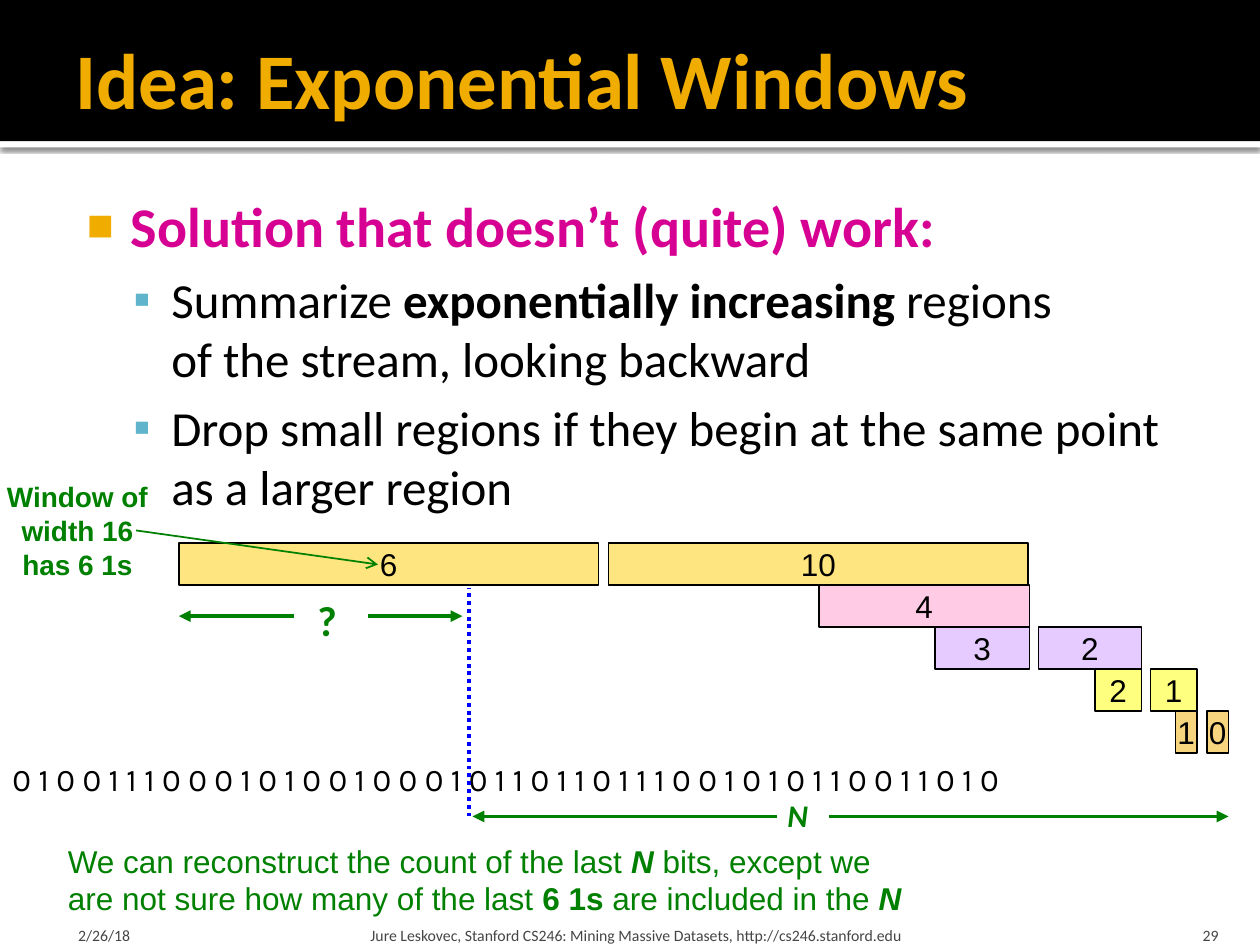
import pptx
import pptx.dml.color
import pptx.enum.shapes
import pptx.enum.text
import pptx.oxml
import pptx.oxml.ns
import pptx.util
from lxml import etree
from pptx.util import Inches

COLORS = {
    "black": "000000", "white": "FFFFFF", "gold": "F0AD00", "magenta": "D60093",
    "teal": "60B5CC", "gray": "454545", "green": "008000", "blue": "0000FF",
    "amber": "FFCC00", "pink": "FF99CC", "lilac": "CC99FF", "yellow": "FFFF00",
}
ANCHOR = pptx.enum.text.MSO_ANCHOR
ALIGN = pptx.enum.text.PP_ALIGN
AUTO_SIZE = pptx.enum.text.MSO_AUTO_SIZE
DEFAULT_INSETS = (0.1, 0.05, 0.1, 0.05)


def rgb(color):
    return pptx.dml.color.RGBColor.from_string(COLORS[color])


def add_xml(parent, tag, **attributes):
    child = etree.SubElement(parent, pptx.oxml.ns.qn("a:" + tag))
    for name, value in attributes.items():
        child.set(name, str(value))
    return child


class SlideBuilder:
    def __init__(self, slide):
        self.shapes = slide.shapes

    def style_frame(self, frame, insets=DEFAULT_INSETS, anchor=ANCHOR.TOP, wrap=True, grow=False):
        frame.word_wrap = wrap
        frame.auto_size = AUTO_SIZE.SHAPE_TO_FIT_TEXT if grow else AUTO_SIZE.NONE
        frame.vertical_anchor = anchor
        (frame.margin_left, frame.margin_top,
         frame.margin_right, frame.margin_bottom) = map(Inches, insets)

    def add_runs(self, para, runs, size, color, font="Calibri", align=ALIGN.LEFT):
        """Add runs given as (text, style); style holds b for bold and i for italic."""
        para.alignment = align
        for text, style in runs:
            for index, line in enumerate(text.split("\n")):
                if index:
                    para.add_line_break()
                span = para.add_run()
                span.text = line
                span.font.name = font
                span.font.size = pptx.util.Pt(size)
                span.font.bold = "b" in style
                span.font.italic = "i" in style
                span.font.color.rgb = rgb(color)

    def text(self, at, runs, size, color, font="Calibri", align=ALIGN.LEFT, **frame_style):
        box = self.shapes.add_textbox(*map(Inches, at))
        self.style_frame(box.text_frame, **frame_style)
        self.add_runs(box.text_frame.paragraphs[0], runs, size, color, font, align)

    def bullet(self, para, char, color, left, hanging, percent=100):
        properties = para._p.get_or_add_pPr()
        properties.set("marL", str(Inches(left)))
        properties.set("indent", str(-Inches(hanging)))
        add_xml(add_xml(properties, "buClr"), "srgbClr", val=COLORS[color])
        add_xml(properties, "buSzPct", val=percent * 1000)
        add_xml(properties, "buFont", typeface="Arial")
        add_xml(properties, "buChar", char=char)

    def outline(self, items):
        box = self.shapes.add_textbox(*map(Inches, (0.5, 1.42, 9, 5.75)))
        frame = box.text_frame
        self.style_frame(frame, insets=(0.06, 0.1, 0.1, 0.05))
        for index, (level, runs) in enumerate(items):
            para = frame.add_paragraph() if index else frame.paragraphs[0]
            para.level = level
            if level:
                para.space_before = pptx.util.Pt(6)
                self.add_runs(para, runs, 28, "black")
                self.bullet(para, "▪", "teal", 0.8, 0.3)
            else:
                self.add_runs(para, runs, 32, "magenta")
                self.bullet(para, "■", "gold", 0.48, 0.35, 80)

    def rectangle(self, at, color):
        box = self.shapes.add_shape(pptx.enum.shapes.MSO_SHAPE.RECTANGLE, *map(Inches, at))
        box.shadow.inherit = False
        box.fill.solid()
        box.fill.fore_color.rgb = rgb(color)
        box.line.fill.background()
        return box

    def drop_shadow(self, box):
        effects = box._element.spPr.find(pptx.oxml.ns.qn("a:effectLst"))
        shadow = add_xml(effects, "outerShdw", blurRad=pptx.util.Pt(2.5),
                         dist=pptx.util.Pt(0.8), dir=90 * 60000, rotWithShape=0)
        add_xml(add_xml(shadow, "srgbClr", val=COLORS["black"]), "alpha", val=60000)

    def region(self, at, color, count):
        """Draw a half-transparent stream region labelled with its count of 1s."""
        box = self.rectangle(at, color)
        fill_color = box._element.spPr.find(".//" + pptx.oxml.ns.qn("a:srgbClr"))
        add_xml(fill_color, "alpha", val=50000)
        box.line.color.rgb = rgb("black")
        box.line.width = pptx.util.Pt(0.75)
        self.style_frame(box.text_frame, anchor=ANCHOR.MIDDLE, wrap=False)
        self.add_runs(box.text_frame.paragraphs[0], [(str(count), "")], 18, "black",
                      "Arial", ALIGN.CENTER)

    def line(self, start, end, color="green", width=2.25, head=None, dash=None):
        connector = self.shapes.add_connector(
            pptx.enum.shapes.MSO_CONNECTOR.STRAIGHT, *map(Inches, start + end))
        connector.line.color.rgb = rgb(color)
        connector.line.width = pptx.util.Pt(width)
        stroke = connector.line._get_or_add_ln()
        if dash:
            add_xml(stroke, "prstDash", val=dash)
        if head:
            add_xml(stroke, "tailEnd", type=head)
        add_xml(connector._element.spPr, "effectLst")


def main():
    deck = pptx.Presentation()
    deck.slide_width, deck.slide_height = Inches(10), Inches(7.5)
    page = SlideBuilder(deck.slides.add_slide(deck.slide_layouts[6]))

    page.drop_shadow(page.rectangle((0, 1.12, 10, 0.05), "white"))
    page.rectangle((0, 0, 10, 1.12), "black")
    page.text((0.5, 0.08, 9, 1.08), [("Idea: Exponential Windows", "b")], 45, "gold",
              insets=(0.1, 0.05, 0.05, 0.05), anchor=ANCHOR.MIDDLE)
    page.outline([
        (0, [("Solution that doesn’t (quite) work:", "b")]),
        (1, [("Summarize ", ""), ("exponentially increasing ", "b"),
             ("regions \nof the stream, looking backward", "")]),
        (1, [("Drop small regions if they begin at the same point as a larger region", "")]),
    ])

    footers = [
        (0.5, 2.33, 0.12, "2/26/18", ALIGN.LEFT),
        (2.89, 6.02, 0.05,
         "Jure Leskovec, Stanford CS246: Mining Massive Datasets, http://cs246.stanford.edu",
         ALIGN.LEFT),
        (8.97, 0.8, 0.1, "29", ALIGN.RIGHT),
    ]
    for left, width, inset, text, align in footers:
        page.text((left, 7.2, width, 0.3), [(text, "")], 9, "gray", align=align,
                  insets=(inset, 0.05, inset, 0), anchor=ANCHOR.BOTTOM)

    bits = "010011100010100100010110110111001010110011010"
    page.text((0, 5.98, 9.81, 0.4), [(" ".join(bits), "")], 18, "black", "Karla",
              wrap=False, grow=True)

    page.text((6.15, 6.27, 0.38, 0.4), [("N", "bi")], 18, "green", wrap=False, grow=True)
    page.text((2.42, 4.67, 0.35, 0.5), [("?", "b")], 24, "green", wrap=False, grow=True)
    for y, start, end in [(6.48, 6.17, 3.75), (6.48, 6.58, 9.75),
                          (4.89, 2.33, 1.42), (4.89, 2.92, 3.67)]:
        page.line((start, y), (end, y), head="triangle")

    region_rows = [
        ("amber", [(1.42, 3.33, 6), (4.83, 3.33, 10)]),
        ("pink", [(6.5, 1.67, 4)]),
        ("lilac", [(7.42, 0.75, 3), (8.24, 0.82, 2)]),
        ("yellow", [(8.69, 0.37, 2), (9.13, 0.37, 1)]),
        ("gold", [(9.33, 0.17, 1), (9.58, 0.17, 0)]),
    ]
    row_height = 1 / 3
    for row, (color, regions) in enumerate(region_rows):
        for left, width, count in regions:
            page.region((left, 4.31 + row * row_height, width, row_height), color, count)

    page.text((0.44, 6.63, 6.97, 0.71), [
        ("We can reconstruct the count of the last ", ""), ("N", "bi"),
        (" bits, except we are not sure how many of the last ", ""), ("6 1s", "b"),
        (" are included in the ", ""), ("N", "bi"),
    ], 18, "green", "Arial", grow=True)
    page.text((-0.05, 3.76, 1.33, 0.91), [("Window of width 16 has 6 1s", "b")], 16, "green",
              "Arial", ALIGN.CENTER, grow=True)
    page.line((1.08, 4.21), (3, 4.48), width=1, head="arrow")
    page.line((3.72, 6.48), (3.72, 4.67), color="blue", dash="sysDot")

    deck.save("out.pptx")


if __name__ == "__main__":
    main()
